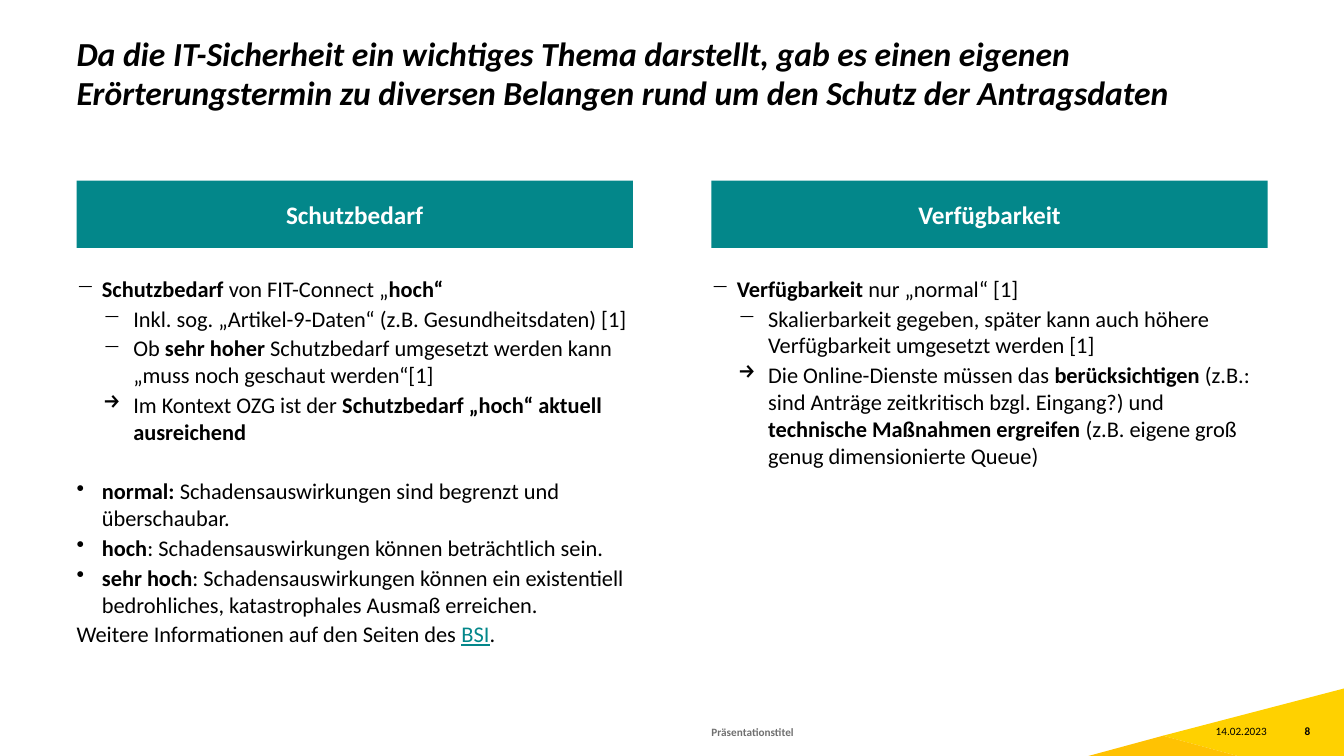
from lxml import etree
from pptx import Presentation
from pptx.dml.color import RGBColor
from pptx.enum.shapes import MSO_SHAPE
from pptx.enum.text import MSO_ANCHOR, PP_ALIGN
from pptx.oxml.ns import qn
from pptx.util import Cm, Pt

RECTANGLE = MSO_SHAPE.RECTANGLE
TOP, MIDDLE, BOTTOM = MSO_ANCHOR.TOP, MSO_ANCHOR.MIDDLE, MSO_ANCHOR.BOTTOM
LEFT, CENTER, RIGHT = PP_ALIGN.LEFT, PP_ALIGN.CENTER, PP_ALIGN.RIGHT

FONT = "Calibri"
COLORS = {
    "text": "000000",
    "muted": "707070",
    "white": "FFFFFF",
    "teal": "03878A",
    "yellow": "FFD100",
    "amber": "FFC203",
}

COLUMN_LEFTS = (1.93, 17.93)
COLUMN_WIDTH = 14.02
# Left margin and first-line indent in cm for each list level
INDENTS = ((0.64, -0.64), (1.43, -0.76))
BODY_SIZE = 16
DASH, ARROW, DOT = "−", "→", "•"


def plain(text):
    return {"text": text}


def bold(text):
    return {"text": text, "bold": True}


def item(bullet, level, *spans, gap=0):
    """Describe one body paragraph; gap is the space before it in points."""
    return {"bullet": bullet, "level": level, "spans": spans, "gap": gap}


COLUMNS = (
    ("Schutzbedarf", (
        item(DASH, 0, bold("Schutzbedarf "), plain("von FIT-Connect „"), bold("hoch“")),
        item(DASH, 1, plain("Inkl. sog. „Artikel-9-Daten“ (z.B. Gesundheitsdaten) [1]")),
        item(DASH, 1, plain("Ob "), bold("sehr hoher "),
             plain("Schutzbedarf umgesetzt werden kann „muss noch geschaut werden“[1]")),
        item(ARROW, 1, plain("Im Kontext OZG ist der "),
             bold("Schutzbedarf „hoch“ aktuell ausreichend")),
        item(DOT, 0, bold("normal:"),
             plain(" Schadensauswirkungen sind begrenzt und überschaubar."), gap=21.5),
        item(DOT, 0, bold("hoch"), plain(": Schadensauswirkungen können beträchtlich sein.")),
        item(DOT, 0, bold("sehr hoch"),
             plain(": Schadensauswirkungen können ein existentiell bedrohliches, "
                   "katastrophales Ausmaß erreichen.")),
        item(None, 0, plain("Weitere Informationen auf den Seiten des "),
             {"text": "BSI", "color": "teal", "underline": True}, plain(".")),
    )),
    ("Verfügbarkeit", (
        item(DASH, 0, bold("Verfügbarkeit "), plain("nur „normal“ [1]")),
        item(DASH, 1, plain("Skalierbarkeit gegeben, später kann auch höhere "
                            "Verfügbarkeit umgesetzt werden [1]")),
        item(ARROW, 1, plain("Die Online-Dienste müssen das "), bold("berücksichtigen"),
             plain(" (z.B.: sind Anträge zeitkritisch bzgl. Eingang?) und "),
             bold("technische Maßnahmen ergreifen "),
             plain("(z.B. eigene groß genug dimensionierte Queue)")),
    )),
)


def rgb(name):
    return RGBColor.from_string(COLORS[name])


def add_span(para, text, size, color="text", bold=False, italic=False, underline=False):
    span = para.add_run()
    span.text = text
    font = span.font
    font.name, font.size = FONT, Pt(size)
    font.bold, font.italic, font.underline = bold, italic, underline
    font.color.rgb = rgb(color)


def set_frame(frame, anchor, wrap=True):
    frame.margin_left = frame.margin_top = frame.margin_right = frame.margin_bottom = 0
    frame.vertical_anchor = anchor
    frame.word_wrap = wrap


def add_text_box(page, left, top, width, height, anchor, wrap=True):
    box = page.shapes.add_textbox(Cm(left), Cm(top), Cm(width), Cm(height))
    set_frame(box.text_frame, anchor, wrap)
    return box.text_frame


def add_label(page, area, anchor, align, text, size, wrap=True, line_spacing=None, **style):
    para = add_text_box(page, *area, anchor, wrap).paragraphs[0]
    para.alignment = align
    para.line_spacing = line_spacing
    add_span(para, text, size, **style)


def set_bullet(para, bullet, level):
    margin, indent = INDENTS[level]
    properties = para._p.get_or_add_pPr()
    properties.set("marL", str(Cm(margin)))
    properties.set("indent", str(Cm(indent)))
    etree.SubElement(properties, qn("a:buChar")).set("char", bullet)
    para.level = level


def add_header(page, left, text):
    bar = page.shapes.add_shape(RECTANGLE, Cm(left), Cm(4.55), Cm(COLUMN_WIDTH), Cm(1.7))
    bar.shadow.inherit = False
    bar.fill.solid()
    bar.fill.fore_color.rgb = rgb("teal")
    bar.line.fill.background()
    set_frame(bar.text_frame, MIDDLE)
    para = bar.text_frame.paragraphs[0]
    para.alignment = CENTER
    add_span(para, text, 18, "white", bold=True)


def add_body(page, left, items):
    frame = add_text_box(page, left, 6.93, COLUMN_WIDTH, 10.59, TOP)
    for index, entry in enumerate(items):
        para = frame.add_paragraph() if index else frame.paragraphs[0]
        if entry["bullet"]:
            set_bullet(para, entry["bullet"], entry["level"])
        if entry["gap"]:
            para.space_before = Pt(entry["gap"])
        para.space_after = Pt(2)
        for span in entry["spans"]:
            add_span(para, size=BODY_SIZE, **span)


def add_polygon(page, color, points):
    corners = [(Cm(x), Cm(y)) for x, y in points]
    builder = page.shapes.build_freeform(*corners[0])
    builder.add_line_segments(corners[1:], close=True)
    polygon = builder.convert_to_shape()
    polygon.shadow.inherit = False
    polygon.fill.solid()
    polygon.fill.fore_color.rgb = rgb(color)
    polygon.line.fill.background()


def main():
    deck = Presentation()
    deck.slide_width, deck.slide_height = Cm(33.87), Cm(19.05)
    page = deck.slides.add_slide(deck.slide_layouts[6])

    fold, base = (29.31, 18.54), (31.19, 19.05)
    add_polygon(page, "yellow", (fold, base, (33.87, 19.05), (33.87, 17.35)))
    add_polygon(page, "amber", ((27.43, 19.05), base, fold))

    add_label(page, (1.93, 0.86, 29.51, 2.01), BOTTOM, LEFT,
              "Da die IT-Sicherheit ein wichtiges Thema darstellt, gab es einen eigenen "
              "Erörterungstermin zu diversen Belangen rund um den Schutz der Antragsdaten",
              24, line_spacing=0.97, bold=True, italic=True)

    for left, (heading, items) in zip(COLUMN_LEFTS, COLUMNS):
        add_header(page, left, heading)
        add_body(page, left, items)

    add_label(page, (17.93, 18.16, 11.15, 0.46), BOTTOM, LEFT,
              "Präsentationstitel", 8, color="muted", bold=True)
    add_label(page, (30.63, 18.26, 1.3, 0.33), MIDDLE, RIGHT, "14.02.2023", 8, wrap=False)
    add_label(page, (32.46, 18.26, 0.56, 0.33), MIDDLE, RIGHT, "8", 8, wrap=False, bold=True)

    deck.save("out.pptx")


if __name__ == "__main__":
    main()
